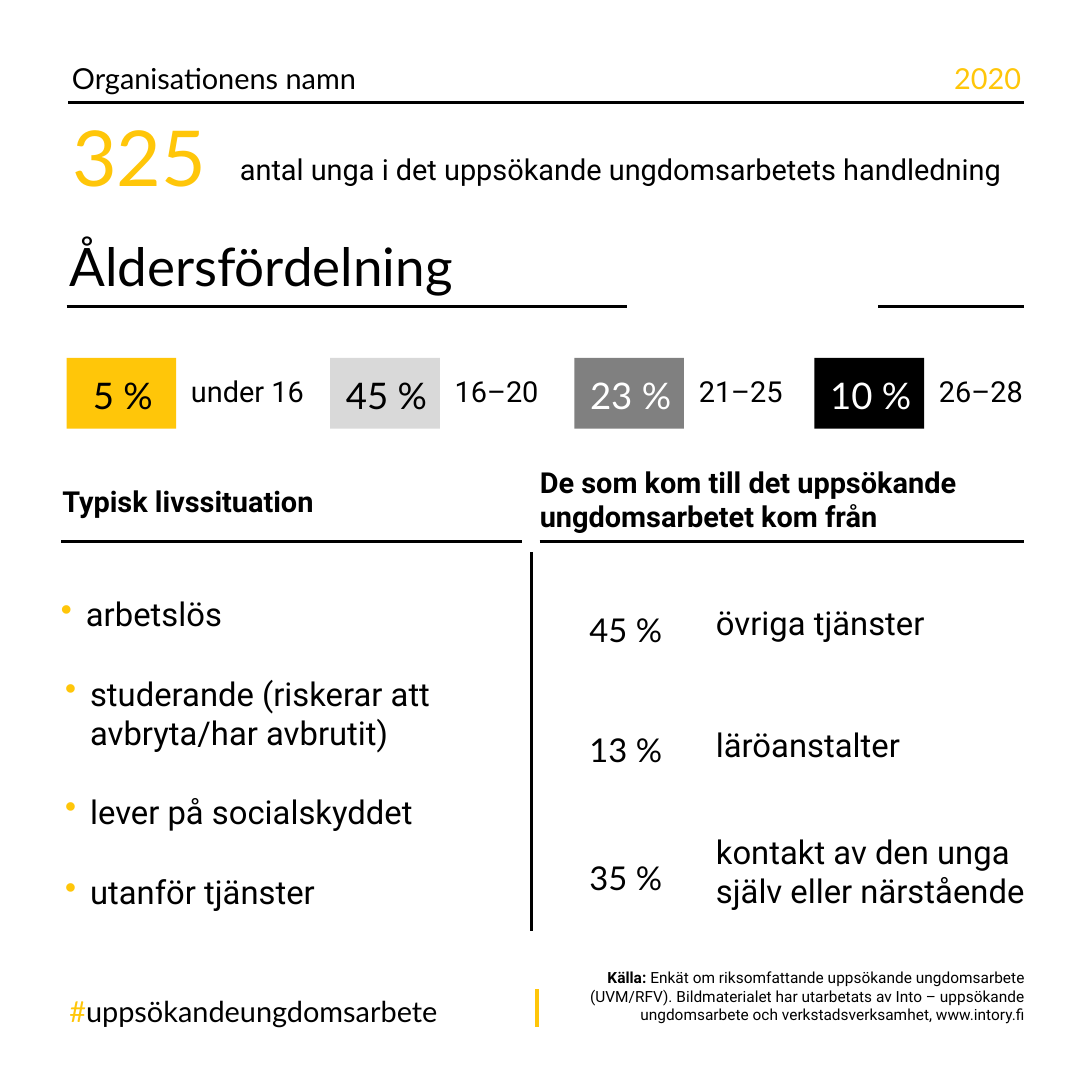
from dataclasses import dataclass

from lxml import etree
from pptx import Presentation
from pptx.dml.color import RGBColor
from pptx.enum.shapes import MSO_CONNECTOR, MSO_SHAPE
from pptx.enum.text import MSO_ANCHOR, PP_ALIGN
from pptx.oxml.ns import qn
from pptx.util import Inches, Pt

RECT, STRAIGHT = MSO_SHAPE.RECTANGLE, MSO_CONNECTOR.STRAIGHT
TOP, MIDDLE = MSO_ANCHOR.TOP, MSO_ANCHOR.MIDDLE
LEFT, CENTER, RIGHT = PP_ALIGN.LEFT, PP_ALIGN.CENTER, PP_ALIGN.RIGHT
SIDE = Inches(7.87)


@dataclass(frozen=True)
class Theme:
    head: str = "Lato"
    body: str = "Roboto"
    ink: str = "000000"
    accent: str = "FFC609"
    light: str = "D9D9D9"
    mid: str = "808080"
    white: str = "FFFFFF"
    total: float = 40
    title: float = 27.5
    chip: float = 19
    item: float = 17
    label: float = 15
    note: float = 8
    leading: float = 24.8
    rule: float = 1.5


T = Theme()
LEFT_EDGE, RIGHT_EDGE = 6.35, 93.77
COLUMN_RULE_Y = 49.56


def pct(value):
    """Length for a share of the square slide's side, in percent."""
    return round(SIDE * value / 100)


def rgb(value):
    return RGBColor.from_string(value)


def write(s, text, font=T.body, size=T.label, color=T.ink, bold=False, align=LEFT,
          anchor=MIDDLE, inset=(0, 0, 0), spacing=None, bullet=False,
          lead="", lead_color=None, lead_bold=False):
    """Fill a shape with one paragraph; inset is left, top, right in percent."""
    tf = s.text_frame
    tf.word_wrap = True
    tf.vertical_anchor = anchor
    tf.margin_left, tf.margin_top, tf.margin_right = map(pct, inset)
    tf.margin_bottom = 0
    p = tf.paragraphs[0]
    if bullet:
        add_bullet(p)
    p.alignment = align
    if spacing:
        p.line_spacing = spacing
    for part, part_color, part_bold in ((lead, lead_color or color, lead_bold),
                                        (text, color, bold)):
        if part:
            r = p.add_run()
            r.text = part
            r.font.name, r.font.size, r.font.bold = font, Pt(size), part_bold
            r.font.color.rgb = rgb(part_color)


def add_bullet(p):
    pPr = p._p.get_or_add_pPr()
    indent = Inches(0.18)
    pPr.set("marL", str(indent))
    pPr.set("indent", str(-indent))
    color = etree.SubElement(pPr, qn("a:buClr"))
    etree.SubElement(color, qn("a:srgbClr"), val=T.accent)
    etree.SubElement(pPr, qn("a:buChar"), char="•")


def add_text(slide, box, text, **fmt):
    write(slide.shapes.add_textbox(*map(pct, box)), text, **fmt)


def add_number(slide, box, text, **fmt):
    """Lato text on the fixed leading that all figures share."""
    add_text(slide, box, text, font=T.head, spacing=Pt(T.leading), anchor=TOP, **fmt)


def add_rule(slide, x1, y1, x2, y2, color=T.ink, width=T.rule):
    s = slide.shapes.add_connector(STRAIGHT, *map(pct, (x1, y1, x2, y2)))
    s.line.color.rgb = rgb(color)
    s.line.width = Pt(width)
    etree.SubElement(s._element.spPr, qn("a:effectLst"))


def add_age_group(slide, x, share, ages, fill, color, width=12.2):
    s = slide.shapes.add_shape(RECT, *map(pct, (x, 32.78, 10.04, 6.48)))
    s.shadow.inherit = False
    s.fill.solid()
    s.fill.fore_color.rgb = rgb(fill)
    s.line.fill.background()
    write(s, share, font=T.head, size=T.chip, color=color, align=CENTER,
          inset=(0.25, 0, 0), spacing=Pt(T.leading))
    add_text(slide, (x + 10.12, 33.55, width, 4.45), ages, inset=(1.27, 0, 0))


def add_header(slide):
    add_number(slide, (LEFT_EDGE, 4.32, 54.26, 3.94), "Organisationens namn",
               inset=(0.25, 0, 0.5))
    add_number(slide, (80.94, 4.32, 12.58, 3.94), "2020", color=T.accent, align=RIGHT)
    add_rule(slide, 6.23, 9.4, RIGHT_EDGE, 9.4)
    add_number(slide, (LEFT_EDGE, 12.58, 14.1, 5.21), "325", size=T.total,
               color=T.accent, inset=(0.25, 1.52, 0))
    add_text(slide, (21.47, 13.21, 75.48, 4.45),
             "antal unga i det uppsökande ungdomsarbetets handledning",
             inset=(0.5, 0, 1.5))


def add_ages(slide):
    add_text(slide, (LEFT_EDGE, 20.71, 49.56, 7.24), "Åldersfördelning",
             font=T.head, size=T.title)
    add_rule(slide, 6.1, 28.08, 57.43, 28.08)
    add_rule(slide, 80.43, 28.08, RIGHT_EDGE, 28.08)
    add_age_group(slide, 6.1, "5 %", "under 16", T.accent, T.ink, width=14.1)
    add_age_group(slide, 30.24, "45 %", "16–20", T.light, T.ink)
    add_age_group(slide, 52.6, "23 %", "21–25", T.mid, T.white)
    add_age_group(slide, 74.59, "10 %", "26–28", T.ink, T.white, width=11.05)


def add_situations(slide):
    add_text(slide, (5.72, 43.58, 43.2, 4.57), "Typisk livssituation", bold=True)
    add_rule(slide, 5.59, COLUMN_RULE_Y, 47.78, COLUMN_RULE_Y)
    for x, y, height, text in (
        (5.59, 54.38, 3.68, "arbetslös"),
        (5.97, 61.63, 7.24, "studerande (riskerar att avbryta/har avbrutit)"),
        (5.97, 72.43, 3.68, "lever på socialskyddet"),
        (5.97, 79.8, 3.68, "utanför tjänster"),
    ):
        add_text(slide, (x, y, 40.28, height), text, size=T.item, bullet=True,
                 inset=(0, 0, 1.5))


def add_origins(slide):
    add_text(slide, (49.43, 41.8, 48.79, 7.75),
             "De som kom till det uppsökande ungdomsarbetet kom från",
             bold=True, inset=(0, 0, 1.5))
    add_rule(slide, 49.43, COLUMN_RULE_Y, RIGHT_EDGE, COLUMN_RULE_Y)
    add_rule(slide, 48.67, 50.57, 48.67, 85.26)
    for share_y, share, y, height, text, spacing in (
        (53.24, "45 %", 54.51, 4.96, "övriga tjänster", None),
        (64.29, "13 %", 65.06, 5.34, "läröanstalter", Pt(25)),
        (75.98, "35 %", 76.24, 7.12, "kontakt av den unga själv eller närstående", Pt(20)),
    ):
        add_number(slide, (52.35, share_y, 9.66, 7.37), share, size=T.item,
                   align=CENTER, inset=(0.25, 1.78, 0))
        add_text(slide, (63.02, y, 33.42, height), text, size=T.item,
                 spacing=spacing, inset=(2.54, 0, 1.5))


def add_footer(slide):
    add_text(slide, (LEFT_EDGE, 90.09, 37.74, 4.45), "uppsökandeungdomsarbete",
             font=T.head, anchor=TOP, inset=(0, 0.64, 0), spacing=1.07,
             lead="#", lead_color=T.accent)
    add_rule(slide, 49.17, 94.03, 49.17, 90.6, color=T.accent, width=2)
    add_text(slide, (52.35, 88.69, 41.55, 5.08),
             "Enkät om riksomfattande uppsökande ungdomsarbete (UVM/RFV). "
             "Bildmaterialet har utarbetats av Into – uppsökande ungdomsarbete "
             "och verkstadsverksamhet, www.intory.fi",
             size=T.note, align=RIGHT, inset=(1, 0, 0), lead="Källa: ", lead_bold=True)


def main():
    prs = Presentation()
    prs.slide_width = prs.slide_height = SIDE
    slide = prs.slides.add_slide(prs.slide_layouts[6])
    for add_part in (add_header, add_ages, add_situations, add_origins, add_footer):
        add_part(slide)
    prs.save("out.pptx")


if __name__ == "__main__":
    main()
